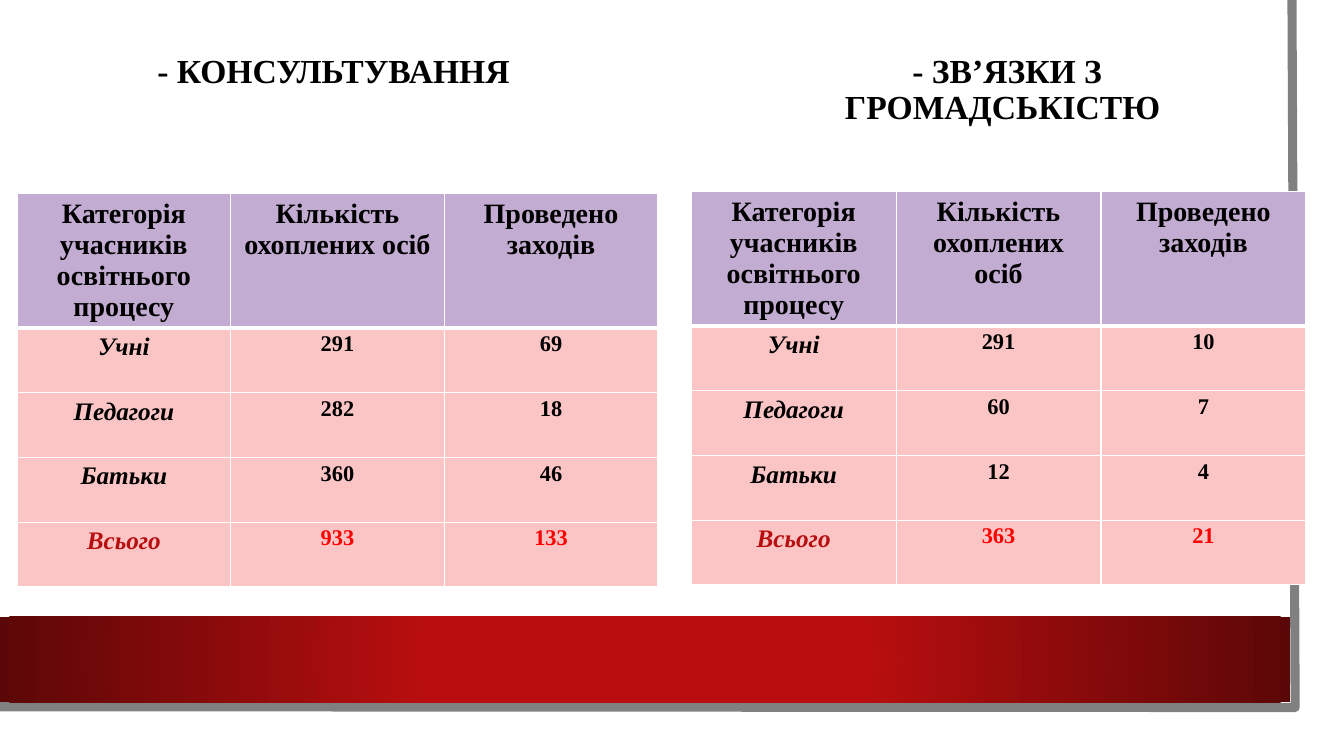
from lxml import etree
from pptx import Presentation
from pptx.dml.color import RGBColor
from pptx.enum import shapes, text
from pptx.oxml import ns
from pptx.util import Cm, Pt

COLOURS = {
    "white": "FFFFFF",
    "black": "000000",
    "frame": "808080",
    "crimson": "B80E0F",
    "maroon": "5C0707",
    "header": "C3ACD1",
    "body": "FBC5C5",
    "total": "FF0000",
}
FONT = "Times New Roman"
HEADINGS = ["Категорія учасників освітнього процесу",
            "Кількість охоплених осіб", "Проведено заходів"]
GROUPS = ["Учні", "Педагоги", "Батьки", "Всього"]
CONSULTING = [(291, 69), (282, 18), (360, 46), (933, 133)]
PUBLIC_RELATIONS = [(291, 10), (60, 7), (12, 4), (363, 21)]
TITLE_LINES = [("\t- КОНСУЛЬТУВАННЯ\t- ЗВ’ЯЗКИ З", [1.27, 20.3]),
               ("\tГРОМАДСЬКІСТЮ", [18.6])]
HEADER_HEIGHT, ROW_HEIGHT = 3.38, 1.63


def colour(name):
    return RGBColor.from_string(COLOURS[name])


def add_run(paragraph, words, size, ink="black", italic=False):
    run = paragraph.add_run()
    run.text = words
    font = run.font
    font.name, font.size, font.bold, font.italic = FONT, Pt(size), True, italic
    font.color.rgb = colour(ink)


def add_panel(slide, shape_box):
    panel = slide.shapes.add_shape(shapes.MSO_SHAPE.RECTANGLE,
                                   *[Cm(length) for length in shape_box])
    panel.shadow.inherit = False
    panel.line.fill.background()
    return panel


def draw_backdrop(slide, left, top, width, height):
    sheet = add_panel(slide, (left, top, width, height))
    sheet.fill.solid()
    sheet.fill.fore_color.rgb = colour("white")

    right, bottom = left + width - 0.65, top + height - 0.64
    builder = slide.shapes.build_freeform(Cm(right - 0.06), Cm(top))
    builder.add_line_segments([(Cm(right + 0.02), Cm(bottom)),
                               (Cm(left - 0.08), Cm(bottom - 0.02))], close=False)
    frame = builder.convert_to_shape()
    frame.shadow.inherit = False
    frame.fill.background()
    frame.line.color.rgb = colour("frame")
    frame.line.width = Pt(6.5)

    band = add_panel(slide, (left, bottom - 2.29, width - 0.76, 2.16))
    band.fill.gradient()
    for stop, position, name in zip(band.fill.gradient_stops, (0.34, 1),
                                    ("crimson", "maroon")):
        stop.position = position
        stop.color.rgb = colour(name)
    gradient = band._element.spPr.find(ns.qn("a:gradFill"))
    gradient.remove(gradient.find(ns.qn("a:lin")))
    circle = etree.SubElement(gradient, ns.qn("a:path"), {"path": "circle"})
    etree.SubElement(circle, ns.qn("a:fillToRect"),
                     dict.fromkeys("ltrb", "50000"))


def write_title(slide, left, top, width, height):
    title = slide.shapes.title
    slide.shapes._spTree.append(title._element)
    title.left, title.top = Cm(left), Cm(top)
    title.width, title.height = Cm(width), Cm(height)
    frame = title.text_frame
    frame.auto_size = text.MSO_AUTO_SIZE.NONE
    frame.vertical_anchor = text.MSO_ANCHOR.MIDDLE
    for index, (words, stops) in enumerate(TITLE_LINES):
        line = frame.add_paragraph() if index else frame.paragraphs[0]
        tabs = etree.SubElement(line._p.get_or_add_pPr(), ns.qn("a:tabLst"))
        for stop in stops:
            etree.SubElement(tabs, ns.qn("a:tab"), pos=str(Cm(stop)), algn="l")
        line.alignment = text.PP_ALIGN.LEFT
        line.line_spacing = 0.9
        add_run(line, words, 24)


def style_cell(cell, fill, bottom_border):
    properties = cell._tc.get_or_add_tcPr()
    for side in ("L", "R", "T", "B"):
        width = bottom_border if side == "B" else 1
        border = etree.SubElement(properties, ns.qn(f"a:ln{side}"),
                                  w=str(Pt(width)))
        solid = etree.SubElement(border, ns.qn("a:solidFill"))
        etree.SubElement(solid, ns.qn("a:srgbClr"), val=COLOURS["white"])
    cell.fill.solid()
    cell.fill.fore_color.rgb = colour(fill)


def draw_table(slide, left, top, width, figures):
    rows = [HEADINGS] + [[group, *pair] for group, pair in zip(GROUPS, figures)]
    height = HEADER_HEIGHT + ROW_HEIGHT * len(figures)
    table = slide.shapes.add_table(len(rows), len(HEADINGS), Cm(left), Cm(top),
                                   Cm(width), Cm(height)).table
    for column in table.columns:
        column.width = Cm(width / len(HEADINGS))
    for r, values in enumerate(rows):
        header, total = r == 0, r == len(rows) - 1
        table.rows[r].height = Cm(HEADER_HEIGHT if header else ROW_HEIGHT)
        for c, value in enumerate(values):
            cell = table.cell(r, c)
            style_cell(cell, "header" if header else "body", 3 if header else 1)
            paragraph = cell.text_frame.paragraphs[0]
            paragraph.alignment = text.PP_ALIGN.CENTER
            if header:
                add_run(paragraph, value, 20)
            elif c == 0:
                add_run(paragraph, value, 18, "crimson" if total else "black", True)
            else:
                cell.margin_left = cell.margin_right = Cm(0.18)
                cell.margin_top = cell.margin_bottom = 0
                paragraph.line_spacing = 1.15
                add_run(paragraph, str(value), 16, "total" if total else "black")


def main():
    deck = Presentation()
    deck.slide_width, deck.slide_height = Cm(33.87), Cm(19.05)
    slide = deck.slides.add_slide(deck.slide_layouts[5])
    draw_backdrop(slide, 0, 0, 33.27, 18.47)
    write_title(slide, 2.44, 0.69, 28.88, 3.2)
    draw_table(slide, 0.43, 4.88, 16.15, CONSULTING)
    draw_table(slide, 17.42, 4.83, 15.49, PUBLIC_RELATIONS)
    deck.save("out.pptx")


if __name__ == "__main__":
    main()
